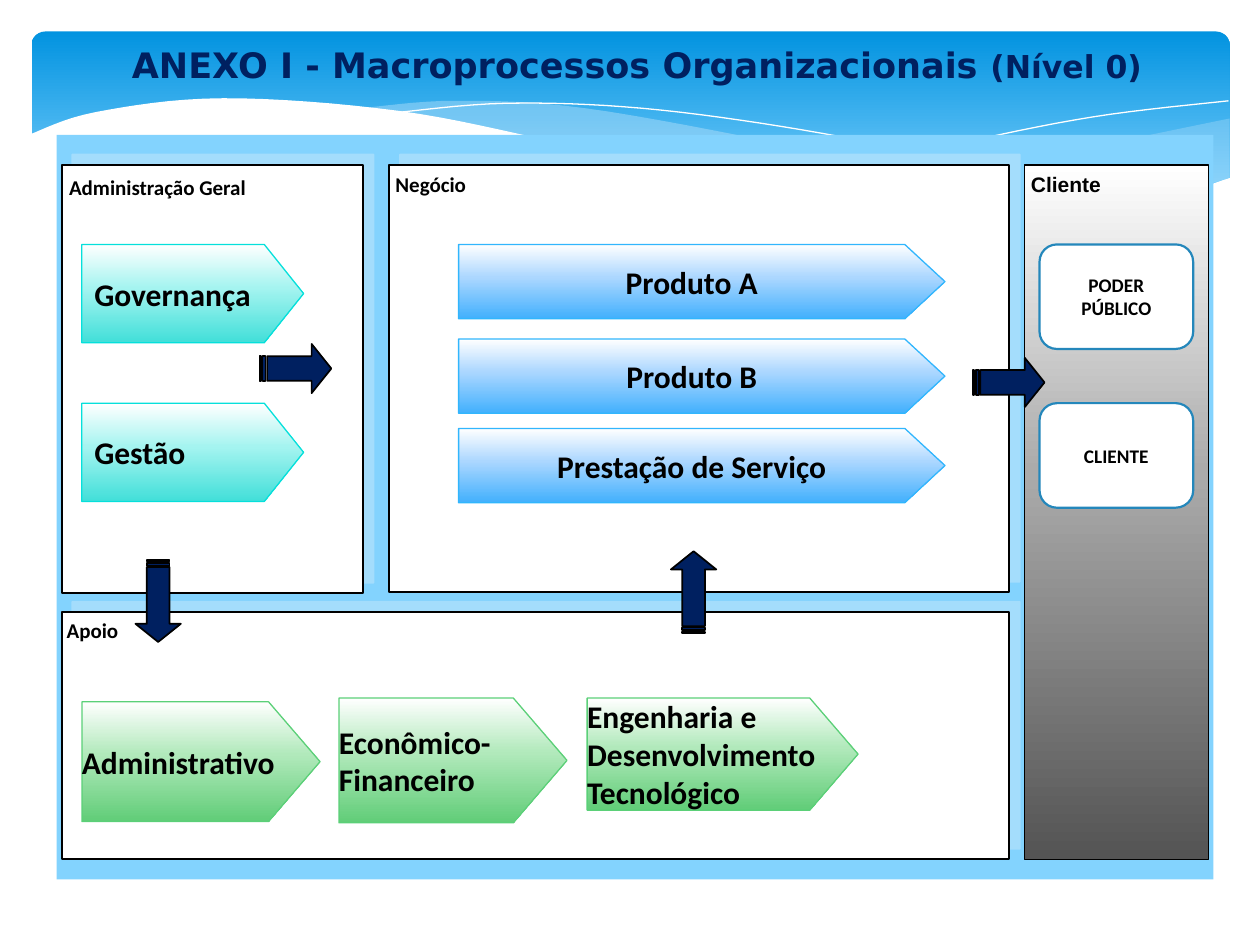
from dataclasses import dataclass
from typing import Any, Optional

from lxml import etree
from pptx import Presentation
from pptx.dml.color import RGBColor
from pptx.enum.shapes import MSO_SHAPE
from pptx.enum.text import MSO_ANCHOR, MSO_AUTO_SIZE, PP_ALIGN
from pptx.oxml.ns import qn
from pptx.util import Pt

PX = 9144  # EMU per px, at 100 px to the inch

RECT, ROUND = MSO_SHAPE.RECTANGLE, MSO_SHAPE.ROUNDED_RECTANGLE
PENTAGON, ARROW = MSO_SHAPE.PENTAGON, MSO_SHAPE.STRIPED_RIGHT_ARROW
MIDDLE, GROW = MSO_ANCHOR.MIDDLE, MSO_AUTO_SIZE.SHAPE_TO_FIT_TEXT
LEFT, CENTER = PP_ALIGN.LEFT, PP_ALIGN.CENTER

color = RGBColor.from_string
WHITE, BLACK, NAVY = color("FFFFFF"), color("000000"), color("002060")
DEEP_SKY, SKY, PALE = color("0293E0"), color("83D3FE"), color("C6E7FC")
CARD_LINE, TEAL_LINE = color("2487BB"), color("05E0DB")
BLUE_LINE, GREEN_LINE = color("31B6FD"), color("5BD078")

Box = tuple[int, int, int, int]
Points = list[tuple[int, int]]
Stops = list[tuple[int, RGBColor]]


def fade(middle: str, end: str) -> Stops:
    """Stops from white through a middle tint to a full colour."""
    return [(0, WHITE), (44, color(middle)), (100, color(end))]


HEADER = [(0, DEEP_SKY), (90, SKY)]
TEAL = fade("A5F4F0", "42DFD9")
BLUE = fade("ACD7FF", "42B0FD")
GREEN = fade("B1E9BB", "61CD78")
GRAY = fade("ABABAB", "545454")


@dataclass(frozen=True)
class Block:
    box: Box
    kind: Any
    fill: Any  # one colour, or gradient stops
    line: Optional[RGBColor] = None
    weight: float = 0.75
    adj: tuple[float, ...] = ()
    shadow: bool = False
    rotation: int = 0
    text: str = ""
    size: int = 18
    align: Any = LEFT
    inset: int = 10
    wrap: bool = True


@dataclass(frozen=True)
class Label:
    text: str
    left: int
    top: int
    width: int
    font: str = "Calibri"
    align: Any = LEFT


@dataclass(frozen=True)
class Wave:
    edges: list[Points]  # each edge is one smooth curve
    fill: Optional[RGBColor] = None
    opacity: int = 100


WAVES = [
    Wave([[(661, 160), (753, 143), (861, 118), (976, 94)],
          [(976, 141), (889, 166), (803, 172), (661, 160)]], PALE, 29),
    Wave([[(286, 86), (361, 80), (465, 86), (629, 116), (775, 149), (893, 167)],
          [(807, 173), (695, 165), (530, 135), (404, 106), (286, 86)]], PALE, 40),
    Wave([[(309, 90), (401, 82), (510, 86), (636, 103), (760, 128), (907, 166)]]),
    Wave([[(613, 151), (748, 117), (866, 93), (975, 80)]]),
    Wave([[(23, 107), (76, 89), (177, 78), (316, 88), (447, 114), (629, 154),
           (793, 171), (899, 164), (977, 141)], [(977, 224), (23, 224)]], WHITE),
]

BAND = Block((25, 25, 951, 156), ROUND, HEADER, adj=(0.07,))

PANELS = [Block((45, 107, 918, 591), RECT, SKY)] + [
    Block(box, RECT, WHITE, BLACK, 1, shadow=True)
    for box in [(49, 486, 752, 196), (49, 131, 239, 340), (309, 131, 492, 339)]
] + [Block((813, 131, 146, 551), RECT, GRAY, BLACK)]

LABELS = [
    Label("Apoio", 43, 485, 218),
    Label("Administração Geral", 45, 134, 233),
    Label("Negócio", 304, 131, 233),
    Label("Cliente", 791, 131, 110, "Arial", CENTER),
]

ROWS = (194, 320)
MANAGEMENT = [
    Block((65, y, 176, 78), PENTAGON, TEAL, TEAL_LINE, adj=(0.4,), text=text)
    for text, y in zip(["Governança", "Gestão"], ROWS)
]
PRODUCTS = [
    Block((364, y, 386, 59), PENTAGON, BLUE, BLUE_LINE, adj=(0.54,), text=text,
          align=CENTER, wrap=False)
    for text, y in [("Produto A", 194), ("Produto B", 269), ("Prestação de Serviço", 340)]
]
SUPPORT = [
    Block(box, PENTAGON, GREEN, GREEN_LINE, adj=(0.43,), text=text, inset=0)
    for text, box in [
        ("Administrativo", (65, 557, 189, 95)),
        ("Econômico-Financeiro", (269, 554, 181, 99)),
        ("Engenharia e Desenvolvimento Tecnológico", (466, 554, 215, 89)),
    ]
]
CARDS = [
    Block((825, y, 122, 83), ROUND, WHITE, CARD_LINE, 1.25, text=text, size=11, align=CENTER)
    for text, y in zip(["PODER PÚBLICO", "CLIENTE"], ROWS)
]
ARROWS = [
    Block((x, y, w, h), ARROW, NAVY, BLACK, 1, (0.5, 0.4), rotation=rotation)
    for x, y, w, h, rotation in [
        (518, 452, 65, 36, 270), (206, 273, 57, 39, 0),
        (93, 459, 65, 36, 90), (772, 284, 57, 39, 0),
    ]
]


def emu(*lengths: int) -> list[int]:
    return [v * PX for v in lengths]


def apply(target: Any, formats: dict[str, Any]) -> None:
    for name, value in formats.items():
        setattr(target, name, value)


def add_alpha(clr: Any, opacity: int) -> None:
    etree.SubElement(clr, qn("a:alpha"), val=str(opacity * 1000))


def add_color(parent: Any, rgb: RGBColor) -> Any:
    return etree.SubElement(parent, qn("a:srgbClr"), val=str(rgb))


def fill_gradient(sp: Any, stops: Stops) -> None:
    """Fill from top to bottom with any number of stops."""
    sp.fill.gradient()
    grad = sp._element.spPr.find(qn("a:gradFill"))
    for child in list(grad):
        grad.remove(child)
    gs_list = etree.SubElement(grad, qn("a:gsLst"))
    for pos, rgb in stops:
        add_color(etree.SubElement(gs_list, qn("a:gs"), pos=str(pos * 1000)), rgb)
    etree.SubElement(grad, qn("a:lin"), ang="5400000", scaled="0")


def add_run(p: Any, text: str, font: str, size: int, rgb: RGBColor = BLACK) -> None:
    r = p.add_run()
    r.text = text
    apply(r.font, {"name": font, "size": Pt(size), "bold": True})
    r.font.color.rgb = rgb


def draw_block(shapes: Any, block: Block) -> None:
    sp = shapes.add_shape(block.kind, *emu(*block.box))
    sp.rotation = block.rotation
    sp.shadow.inherit = False
    for i, value in enumerate(block.adj):
        sp.adjustments[i] = value
    if isinstance(block.fill, list):
        fill_gradient(sp, block.fill)
    else:
        sp.fill.solid()
        sp.fill.fore_color.rgb = block.fill
    if block.line is None:
        sp.line.fill.background()
    else:
        sp.line.color.rgb = block.line
        sp.line.width = Pt(block.weight)
    if block.shadow:
        effects = sp._element.spPr.find(qn("a:effectLst"))
        shadow = etree.SubElement(effects, qn("a:outerShdw"), dist=str(Pt(8.5)),
                                  dir="18900000", algn="ctr", rotWithShape="0")
        add_alpha(add_color(shadow, PALE), 50)
    if block.text:
        tf = sp.text_frame
        apply(tf, {"word_wrap": block.wrap, "vertical_anchor": MIDDLE,
                   "margin_left": block.inset * PX, "margin_right": block.inset * PX})
        p = tf.paragraphs[0]
        p.alignment = block.align
        add_run(p, block.text, "Calibri", block.size)


def smooth(points: Points, steps: int = 8) -> list[tuple[float, ...]]:
    """Sample a Catmull-Rom curve that passes through the points."""
    ends = [points[0], *points, points[-1]]
    curve = [
        tuple(b + t * (c - a + t * (2 * a - 5 * b + 4 * c - d + t * (3 * (b - c) + d - a))) / 2
              for a, b, c, d in zip(*ends[i:i + 4]))
        for i in range(len(points) - 1) for t in (k / steps for k in range(steps))
    ]
    return [*curve, points[-1]]


def draw_wave(shapes: Any, wave: Wave) -> None:
    """Draw a filled wave, or a white hairline when it has no fill."""
    outline = [emu(*point) for edge in wave.edges for point in smooth(edge)]
    builder = shapes.build_freeform(*map(round, outline[0]))
    builder.add_line_segments([(round(x), round(y)) for x, y in outline[1:]],
                              close=wave.fill is not None)
    sp = builder.convert_to_shape()
    sp.shadow.inherit = False
    if wave.fill is None:
        sp.fill.background()
        sp.line.color.rgb = WHITE
        sp.line.width = 0
        return
    sp.line.fill.background()
    sp.fill.solid()
    sp.fill.fore_color.rgb = wave.fill
    add_alpha(sp._element.spPr.find(qn("a:solidFill"))[0], wave.opacity)


def add_text_line(shapes: Any, box: Box, align: Any) -> Any:
    tf = shapes.add_textbox(*emu(*box)).text_frame
    apply(tf, {"word_wrap": True, "auto_size": GROW})
    p = tf.paragraphs[0]
    p.alignment = align
    return p


def main() -> None:
    prs = Presentation()
    apply(prs, {"slide_width": 1000 * PX, "slide_height": 750 * PX})
    shapes = prs.slides.add_slide(prs.slide_layouts[6]).shapes
    draw_block(shapes, BAND)
    for wave in WAVES:
        draw_wave(shapes, wave)
    for panel in PANELS:
        draw_block(shapes, panel)
    for label in LABELS:
        p = add_text_line(shapes, (label.left, label.top, label.width, 30), label.align)
        add_run(p, label.text, label.font, 12)
    for block in MANAGEMENT + PRODUCTS + SUPPORT + CARDS + ARROWS:
        draw_block(shapes, block)
    title = add_text_line(shapes, (45, 30, 921, 44), CENTER)
    add_run(title, "ANEXO I - Macroprocessos Organizacionais ", "DejaVu Sans", 20, NAVY)
    add_run(title, "(Nível 0)", "DejaVu Sans", 18, NAVY)
    prs.save("out.pptx")


if __name__ == "__main__":
    main()
